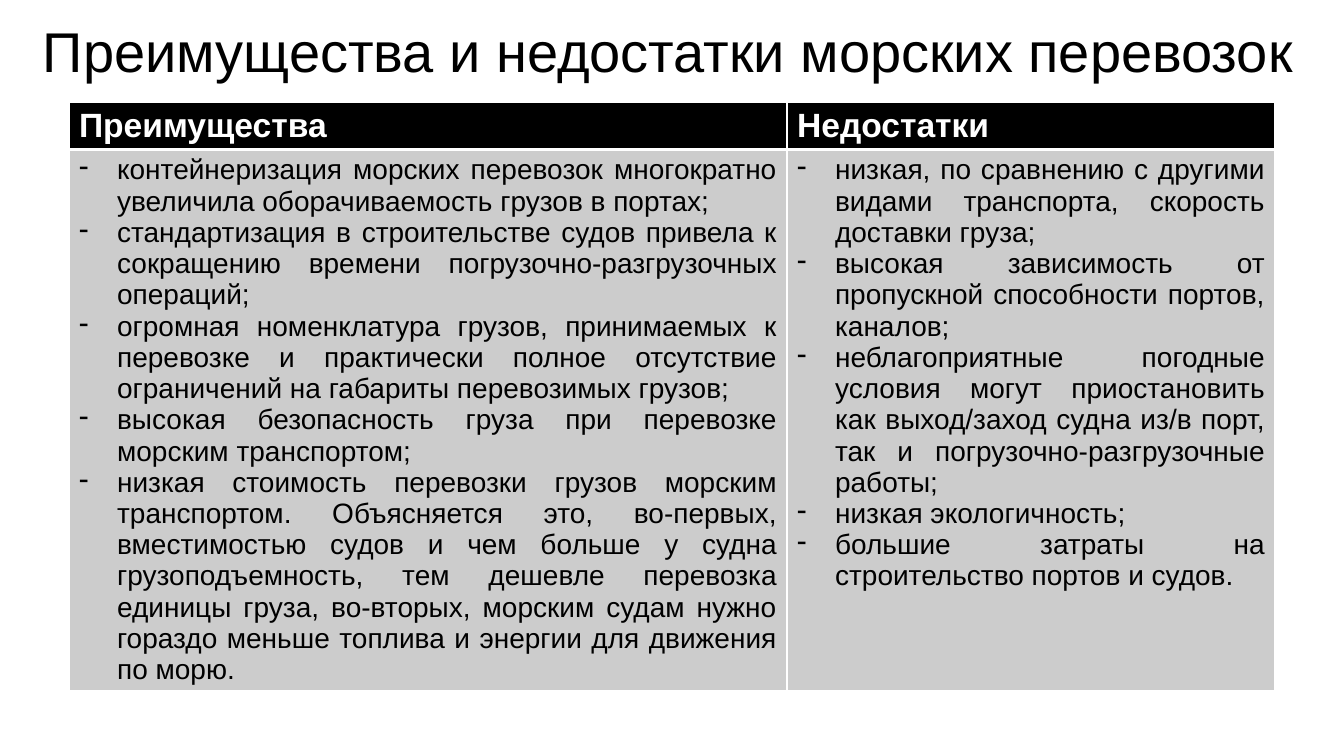
from lxml import etree
from pptx import Presentation
from pptx.dml.color import RGBColor
from pptx.enum import text
from pptx.oxml import ns
from pptx.util import Pt

TITLE = "Преимущества и недостатки морских перевозок"
COLUMNS = [
    ("Преимущества", 718, [
        "контейнеризация морских перевозок многократно увеличила оборачиваемость грузов в портах;",
        "стандартизация в строительстве судов привела к сокращению времени "
        "погрузочно-разгрузочных операций;",
        "огромная номенклатура грузов, принимаемых к перевозке и практически полное "
        "отсутствие ограничений на габариты перевозимых грузов;",
        "высокая безопасность груза при перевозке морским транспортом;",
        "низкая стоимость перевозки грузов морским транспортом. Объясняется это, "
        "во-первых, вместимостью судов и чем больше у судна грузоподъемность, тем "
        "дешевле перевозка единицы груза, во-вторых, морским судам нужно гораздо "
        "меньше топлива и энергии для движения по морю.",
    ]),
    ("Недостатки", 488, [
        "низкая, по сравнению с другими видами транспорта, скорость доставки груза;",
        "высокая зависимость от пропускной способности портов, каналов;",
        "неблагоприятные погодные условия могут приостановить как выход/заход судна "
        "из/в порт, так и погрузочно-разгрузочные работы;",
        "низкая экологичность;",
        "большие затраты на строительство портов и судов.",
    ]),
]
ROW_HEIGHTS = (47, 541)
PAGE_SIZE = (1344, 756)
TITLE_AREA = (33, 12, 1276, 78)
TABLE_CORNER = (69, 102)
INDENT = 38

FONT = "Arial"
BLACK = RGBColor(0x00, 0x00, 0x00)
WHITE = RGBColor(0xFF, 0xFF, 0xFF)
GREY = RGBColor(0xCC, 0xCC, 0xCC)


def px(length):
    return round(length * 914400 / 100.8)


def set_font(para, size, color, bold=False):
    font = para.font
    font.name, font.size, font.bold = FONT, Pt(size), bold
    font.color.rgb = color


def add_dash(para):
    """Give the paragraph a hanging dash as its bullet."""
    properties = para._p.get_or_add_pPr()
    properties.set("marL", str(px(INDENT)))
    properties.set("indent", str(-px(INDENT)))
    bullet = etree.Element(ns.qn("a:buChar"), char="-")
    properties.insert(0, bullet)


def style_cell(cell, color, bottom_width):
    """Draw white borders, then the fill, in schema order."""
    properties = cell._tc.get_or_add_tcPr()
    for side, width in (("L", 1), ("R", 1), ("T", 1), ("B", bottom_width)):
        line = etree.SubElement(properties, ns.qn("a:ln" + side), w=str(Pt(width)))
        fill = etree.SubElement(line, ns.qn("a:solidFill"))
        etree.SubElement(fill, ns.qn("a:srgbClr"), val=str(WHITE))
    cell.fill.solid()
    cell.fill.fore_color.rgb = color


def add_title(page):
    frame = page.shapes.add_textbox(*map(px, TITLE_AREA)).text_frame
    frame.word_wrap = True
    frame.auto_size = text.MSO_AUTO_SIZE.SHAPE_TO_FIT_TEXT
    frame.text = TITLE
    set_font(frame.paragraphs[0], 40, BLACK)


def add_comparison(page):
    width = sum(column_width for _, column_width, _ in COLUMNS)
    area = (*TABLE_CORNER, width, sum(ROW_HEIGHTS))
    table = page.shapes.add_table(2, len(COLUMNS), *map(px, area)).table
    for row, height in zip(table.rows, ROW_HEIGHTS):
        row.height = px(height)
    for index, (heading, column_width, points) in enumerate(COLUMNS):
        table.columns[index].width = px(column_width)
        head, body = table.cell(0, index), table.cell(1, index)
        style_cell(head, BLACK, 3)
        head.text = heading
        set_font(head.text_frame.paragraphs[0], 24, WHITE, bold=True)
        style_cell(body, GREY, 1)
        body.text = "\n".join(points)
        for para in body.text_frame.paragraphs:
            para.alignment = text.PP_ALIGN.JUSTIFY
            set_font(para, 20, BLACK)
            add_dash(para)


def main():
    deck = Presentation()
    deck.slide_width, deck.slide_height = map(px, PAGE_SIZE)
    page = deck.slides.add_slide(deck.slide_layouts[6])
    add_comparison(page)
    add_title(page)
    deck.save("out.pptx")


if __name__ == "__main__":
    main()
